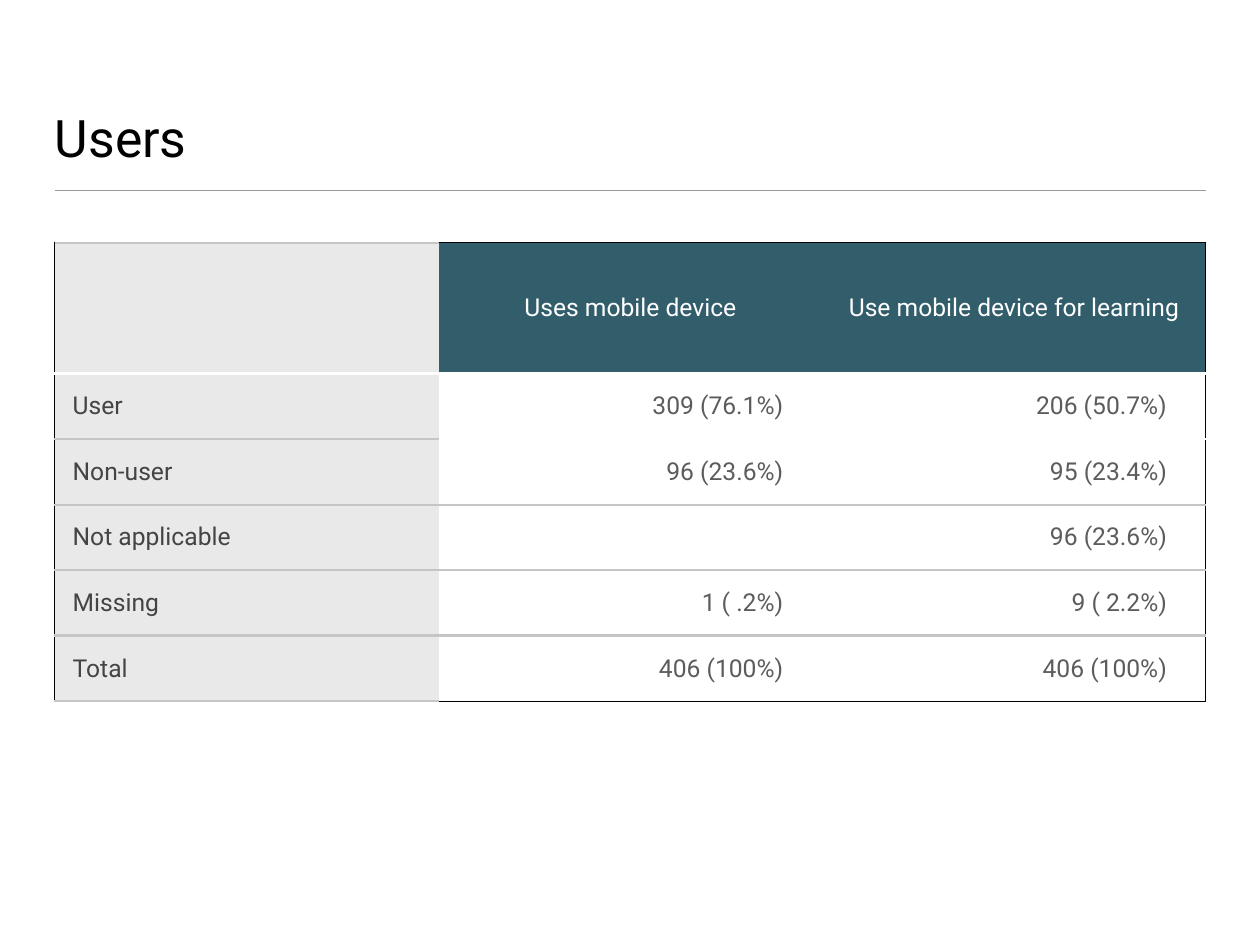
from typing import NamedTuple, Optional

from lxml.etree import SubElement
from pptx import Presentation
from pptx.dml.color import RGBColor
from pptx.enum.shapes import MSO_CONNECTOR as Connector
from pptx.enum.text import MSO_ANCHOR as Anchor, PP_ALIGN as Align
from pptx.oxml import parse_xml
from pptx.oxml.ns import nsdecls, qn
from pptx.util import Inches, Pt

FONT = "Roboto"
LEFT, WIDTH = 0.62, 12.99
HEADER_HEIGHT, ROW_HEIGHT = 1.48, 0.74


class Line(NamedTuple):
    color: str
    width: float


class CellStyle(NamedTuple):
    fill: str
    color: str
    align: Align
    left: float = 0.06
    right: float = 0.06


BLACK = Line("000000", 1)
WHITE = Line("FFFFFF", 2)
GRAY = Line("C4C6C6", 2)
HEADER_LINE = Line("FFFFFF", 3)
TOTAL_LINE = Line("C4C6C6", 3)

CORNER = CellStyle("E8E9E8", "444444", Align.LEFT)
HEADING = CellStyle("325D6B", "FFFFFF", Align.CENTER)
LABEL = CellStyle("E8E9E8", "444444", Align.LEFT, left=0.2)
VALUE = CellStyle("FFFFFF", "5C5C5C", Align.RIGHT, right=0.44)

ROWS = [
    ("", "Uses mobile device", "Use mobile device for learning"),
    ("User", "309 (76.1%)", "206 (50.7%)"),
    ("Non-user", "96 (23.6%)", "95 (23.4%)"),
    ("Not applicable", "", "96 (23.6%)"),
    ("Missing", "1 ( .2%)", "9 ( 2.2%)"),
    ("Total", "406 (100%)", "406 (100%)"),
]
# Horizontal lines from top to bottom, then vertical lines from left to right
LABEL_LINES = [GRAY, HEADER_LINE, GRAY, GRAY, GRAY, TOTAL_LINE, GRAY]
VALUE_LINES = [BLACK, HEADER_LINE, WHITE, GRAY, GRAY, TOTAL_LINE, BLACK]
SIDE_LINES = [BLACK, None, None, BLACK]


def rgb(color: str) -> RGBColor:
    return RGBColor.from_string(color)


def assign(target, values: dict) -> None:
    for name, value in values.items():
        setattr(target, name, value)


def write(para, text: str, size: float, color: str) -> None:
    span = para.add_run()
    span.text = text
    assign(span.font, {"name": FONT, "size": Pt(size), "bold": False})
    span.font.color.rgb = rgb(color)


def border_element(side: str, line: Optional[Line]):
    width = Pt(line.width) if line else 0
    border = parse_xml(f'<a:ln{side} {nsdecls("a")} w="{width}"/>')
    if line:
        fill = SubElement(border, qn("a:solidFill"))
        SubElement(fill, qn("a:srgbClr"), val=line.color)
    else:
        SubElement(border, qn("a:noFill"))
    return border


def style_for(row: int, column: int) -> CellStyle:
    if row == 0:
        return HEADING if column else CORNER
    return VALUE if column else LABEL


def fill_cell(cell, text: str, row: int, column: int) -> None:
    style = style_for(row, column)
    assign(cell, {
        "vertical_anchor": Anchor.MIDDLE,
        "margin_left": Inches(style.left),
        "margin_right": Inches(style.right),
        "margin_top": Inches(0.06),
        "margin_bottom": Inches(0.06),
    })
    cell.fill.solid()
    cell.fill.fore_color.rgb = rgb(style.fill)
    para = cell.text_frame.paragraphs[0]
    para.alignment = style.align
    if text:
        write(para, text, 20, style.color)

    # Borders come before the fill in the cell properties
    across = VALUE_LINES if column else LABEL_LINES
    borders = {"L": SIDE_LINES[column], "R": SIDE_LINES[column + 1],
               "T": across[row], "B": across[row + 1]}
    properties = cell._tc.get_or_add_tcPr()
    for position, (side, line) in enumerate(borders.items()):
        properties.insert(position, border_element(side, line))


def add_title(page, text: str) -> None:
    box = page.shapes.add_textbox(Inches(LEFT), Inches(0.36), Inches(WIDTH), Inches(1.53))
    assign(box.text_frame, {
        "word_wrap": True, "vertical_anchor": Anchor.BOTTOM,
        "margin_left": 0, "margin_right": 0, "margin_top": 0, "margin_bottom": 0,
    })
    write(box.text_frame.paragraphs[0], text, 42, "000000")


def add_rule(page, top: float) -> None:
    rule = page.shapes.add_connector(
        Connector.STRAIGHT, Inches(LEFT), Inches(top), Inches(LEFT + WIDTH), Inches(top))
    rule.line.color.rgb = rgb("9A9A9A")
    rule.line.width = Pt(1)
    SubElement(rule._element.spPr, qn("a:effectLst"))


def add_users_table(page) -> None:
    columns = len(ROWS[0])
    height = HEADER_HEIGHT + ROW_HEIGHT * (len(ROWS) - 1)
    table = page.shapes.add_table(
        len(ROWS), columns, Inches(LEFT), Inches(2.74), Inches(WIDTH), Inches(height)).table
    assign(table, {"first_row": False, "horz_banding": False})
    for column in table.columns:
        column.width = Inches(WIDTH / columns)
    for row, texts in enumerate(ROWS):
        table.rows[row].height = Inches(ROW_HEIGHT if row else HEADER_HEIGHT)
        for column, text in enumerate(texts):
            fill_cell(table.cell(row, column), text, row, column)


def main() -> None:
    deck = Presentation()
    assign(deck, {"slide_width": Inches(14.22), "slide_height": Inches(10.67)})
    page = deck.slides.add_slide(deck.slide_layouts[6])
    add_rule(page, 2.15)
    add_title(page, "Users")
    add_users_table(page)
    deck.save("out.pptx")


if __name__ == "__main__":
    main()
